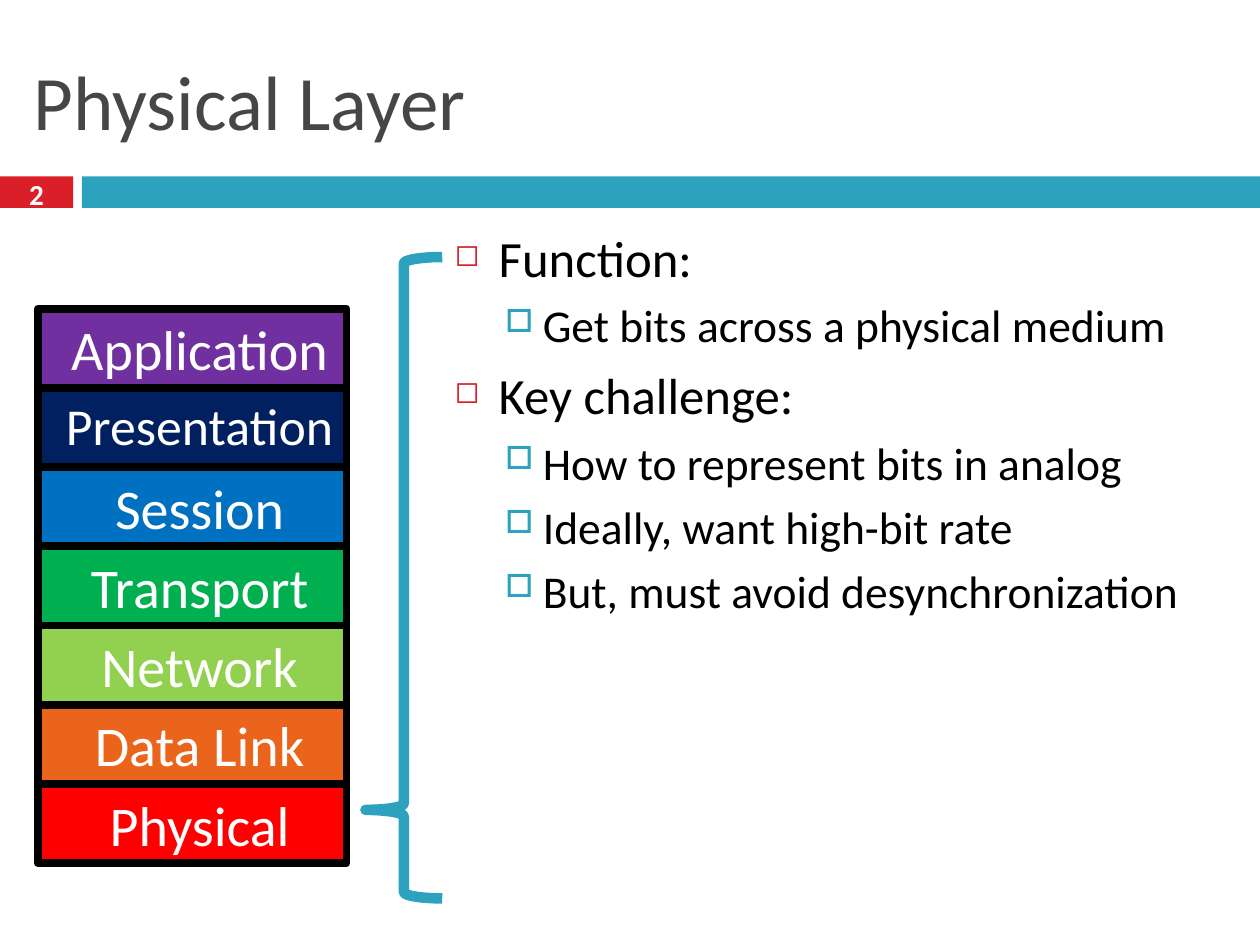
from lxml.etree import SubElement
from pptx import Presentation
from pptx.dml.color import RGBColor
from pptx.enum.shapes import MSO_SHAPE
from pptx.enum.text import MSO_ANCHOR, PP_ALIGN
from pptx.oxml.ns import qn
from pptx.util import Inches, Pt

COLORS = {
    "red": "DA1F28", "teal": "2DA2BF", "title": "464646",
    "black": "000000", "white": "FFFFFF",
    "Application": "7030A0", "Presentation": "002060", "Session": "0070C0",
    "Transport": "00B050", "Network": "92D050", "Data Link": "EB641B",
    "Physical": "FF0000",
}
LAYERS = ["Application", "Presentation", "Session", "Transport", "Network",
          "Data Link", "Physical"]
POINTS = [
    (0, "Function:"),
    (1, "Get bits across a physical medium"),
    (0, "Key challenge:"),
    (1, "How to represent bits in analog"),
    (1, "Ideally, want high-bit rate"),
    (1, "But, must avoid desynchronization"),
]
LEVELS = [
    {"size": 29, "before": 7, "margin": 0.35, "indent": -0.35,
     "bullet": ("◻", "red", 60)},
    {"size": 26, "before": 5.5, "margin": 0.7, "indent": -0.3,
     "bullet": ("□", "teal", 70)},
]


def rgb(name):
    """Return the named colour."""
    return RGBColor.from_string(COLORS[name])


def write(p, text, size=32, color="black", bold=False, align=PP_ALIGN.LEFT,
          before=0, margin=0, indent=0, bullet=None):
    """Fill a paragraph with one formatted run."""
    p.alignment = align
    p.space_before = Pt(before)
    r = p.add_run()
    r.text = text
    r.font.name = "Calibri"
    r.font.size = Pt(size)
    r.font.bold = bold
    r.font.color.rgb = rgb(color)
    pPr = p._p.get_or_add_pPr()
    pPr.set("marL", str(Inches(margin)))
    pPr.set("indent", str(Inches(indent)))
    if bullet:
        char, tint, percent = bullet
        buClr = SubElement(pPr, qn("a:buClr"))
        SubElement(buClr, qn("a:srgbClr"), val=COLORS[tint])
        SubElement(pPr, qn("a:buSzPct"), val=str(percent * 1000))
        SubElement(pPr, qn("a:buChar"), char=char)


def add_text_box(s, box, anchor=MSO_ANCHOR.TOP):
    """Add a wrapping text box and return its text frame."""
    tf = s.shapes.add_textbox(*map(Inches, box)).text_frame
    tf.word_wrap = True
    tf.vertical_anchor = anchor
    return tf


def add_shape(s, kind, box, fill=None, line=None, width=0):
    """Add a flat preset shape."""
    sp = s.shapes.add_shape(kind, *map(Inches, box))
    sp.shadow.inherit = False
    if fill:
        sp.fill.solid()
        sp.fill.fore_color.rgb = rgb(fill)
    else:
        sp.fill.background()
    if line:
        sp.line.color.rgb = rgb(line)
        sp.line.width = Pt(width)
    else:
        sp.line.fill.background()
    return sp


def add_header(s, x, y, w, h):
    """Add the title, the divider bars and the slide number."""
    bar_y, bar_h, tab_w, bar_x = y + 1.4, 0.25, 0.58, 0.65
    add_shape(s, MSO_SHAPE.RECTANGLE, (x, bar_y, tab_w, bar_h), "red")
    add_shape(s, MSO_SHAPE.RECTANGLE, (x + bar_x, bar_y, w - bar_x, bar_h), "teal")
    tf = add_text_box(s, (x + 0.17, y + 0.25, w - 0.33, h - 0.57), MSO_ANCHOR.MIDDLE)
    write(tf.paragraphs[0], "Physical Layer", size=44, color="title")
    tf = add_text_box(s, (x, bar_y - 0.03, tab_w, 0.33), MSO_ANCHOR.MIDDLE)
    write(tf.paragraphs[0], "2", size=16.6, color="white", bold=True,
          align=PP_ALIGN.CENTER)


def add_points(s, x, y, w, h):
    """Add the two-level bullet list."""
    tf = add_text_box(s, (x, y, w, h))
    for i, (level, text) in enumerate(POINTS):
        p = tf.add_paragraph() if i else tf.paragraphs[0]
        p.level = level
        write(p, text, **LEVELS[level])


def add_stack(s, x, y, w, h):
    """Add the network layers as a stack of equal boxes."""
    step = h / len(LAYERS)
    for i, name in enumerate(LAYERS):
        sp = add_shape(s, MSO_SHAPE.RECTANGLE, (x, y + i * step, w, step),
                       name, "black", 4.5)
        tf = sp.text_frame
        tf.word_wrap = True
        tf.vertical_anchor = MSO_ANCHOR.TOP
        write(tf.paragraphs[0], name, size=29.6 if name == "Presentation" else 32,
              color="white", align=PP_ALIGN.CENTER, margin=0.12)


def add_brace(s, x, y, w, h):
    """Add the brace that points at the bottom layer."""
    sp = add_shape(s, MSO_SHAPE.LEFT_BRACE, (x, y, w, h), line="teal", width=6)
    sp.adjustments[0] = 0.083
    sp.adjustments[1] = 0.862


def main():
    """Build and save the slide."""
    prs = Presentation()
    prs.slide_width, prs.slide_height = Inches(10), Inches(7.5)
    s = prs.slides.add_slide(prs.slide_layouts[6])
    add_header(s, 0, 0, 10, 1.65)
    add_points(s, 3.51, 1.75, 6.49, 5.58)
    add_stack(s, 0.3, 2.45, 2.45, 4.4)
    add_brace(s, 2.9, 2.04, 0.61, 5.09)
    prs.save("out.pptx")


if __name__ == "__main__":
    main()
